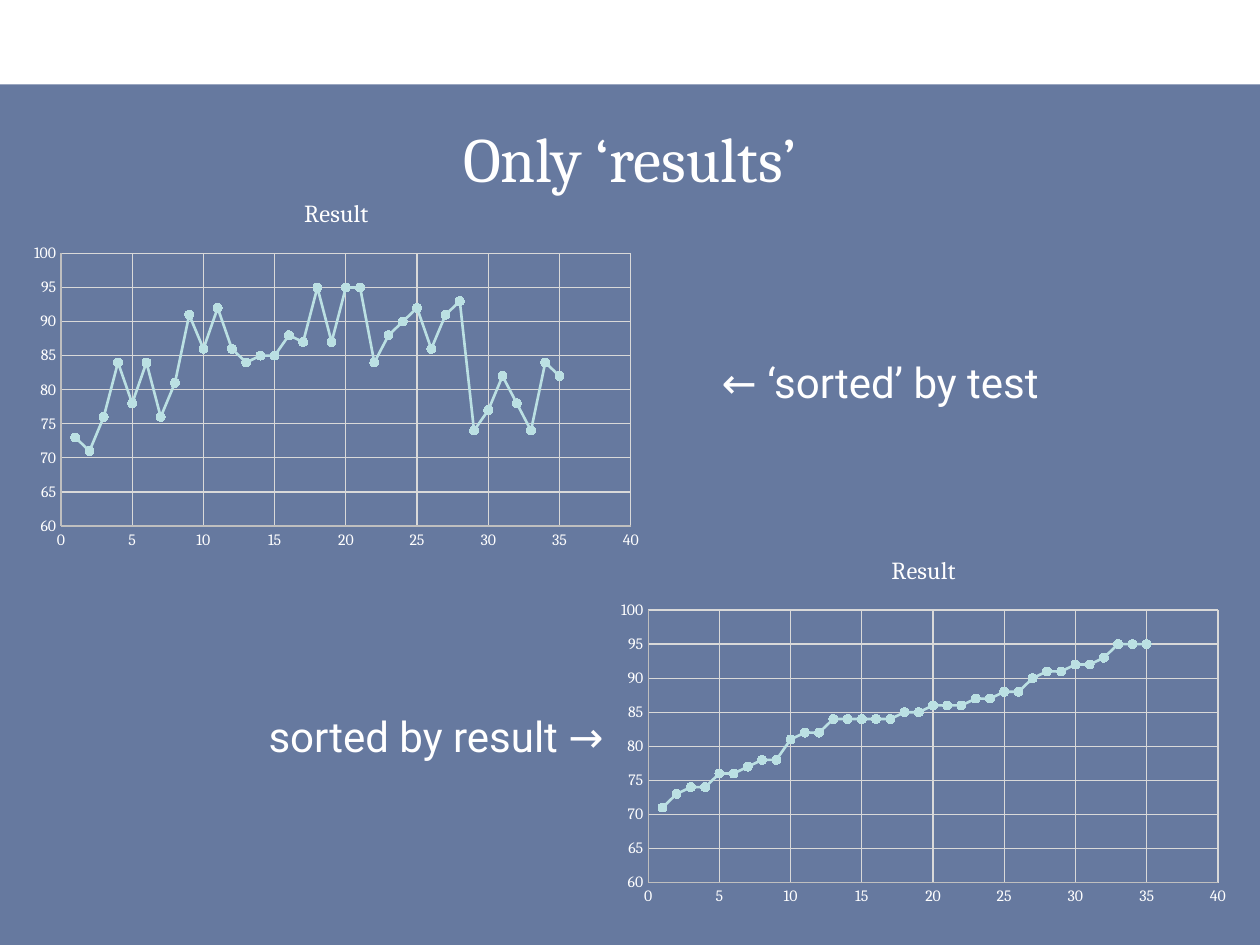
from lxml import etree
from pptx import Presentation
from pptx.chart.data import XyChartData
from pptx.dml.color import RGBColor
from pptx.enum.chart import XL_CHART_TYPE, XL_MARKER_STYLE, XL_TICK_MARK
from pptx.enum.shapes import MSO_SHAPE
from pptx.enum.text import MSO_ANCHOR, PP_ALIGN
from pptx.oxml.ns import qn
from pptx.util import Inches, Pt

SCATTER = XL_CHART_TYPE.XY_SCATTER_LINES
CIRCLE = XL_MARKER_STYLE.CIRCLE
NO_TICK = XL_TICK_MARK.NONE
RECT = MSO_SHAPE.RECTANGLE
MIDDLE = MSO_ANCHOR.MIDDLE
LEFT, CENTER, RIGHT = PP_ALIGN.LEFT, PP_ALIGN.CENTER, PP_ALIGN.RIGHT

WHITE, NAVY, SERIES = "FFFFFF", "002060", "BBE0E3"
AXIS, GRID = "BFBFBF", "D9D9D9"
SERIF, SANS = "Cambria", "Roboto"

RESULTS = [73, 71, 76, 84, 78, 84, 76, 81, 91, 86, 92, 86, 84, 85, 85, 88, 87, 95,
           87, 95, 95, 84, 88, 90, 92, 86, 91, 93, 74, 77, 82, 78, 74, 84, 82]


def rgb(color):
    return RGBColor.from_string(color)


def style_font(font, name, size, color=WHITE):
    font.name = name
    font.size = Pt(size)
    font.bold = False
    font.color.rgb = rgb(color)


def style_line(line, color, width):
    line.color.rgb = rgb(color)
    line.width = Pt(width)


def fill_solid(fill, color):
    fill.solid()
    fill.fore_color.rgb = rgb(color)


def add_panel(slide, box, color, opacity):
    s = slide.shapes.add_shape(RECT, *map(Inches, box))
    s.shadow.inherit = False
    s.line.fill.background()
    fill_solid(s.fill, color)
    clr = s.fill._xPr.find(".//" + qn("a:srgbClr"))
    etree.SubElement(clr, qn("a:alpha"), val=str(opacity * 1000))


def add_text(slide, box, text, font, size, align):
    tf = slide.shapes.add_textbox(*map(Inches, box)).text_frame
    tf.word_wrap = True
    tf.vertical_anchor = MIDDLE
    tf.text = text
    p = tf.paragraphs[0]
    p.alignment = align
    style_font(p.runs[0].font, font, size)


def style_axis(axis, low, high):
    axis.minimum_scale, axis.maximum_scale = low, high
    axis.major_unit = 5
    axis.major_tick_mark = axis.minor_tick_mark = NO_TICK
    axis.has_major_gridlines = True
    style_line(axis.major_gridlines.format.line, GRID, 0.75)
    style_line(axis.format.line, AXIS, 0.75)
    style_font(axis.tick_labels.font, SERIF, 9)


def add_result_chart(slide, box, values):
    data = XyChartData()
    points = data.add_series("Result")
    for x, y in enumerate(values, 1):
        points.add_data_point(x, y)
    chart = slide.shapes.add_chart(SCATTER, *map(Inches, box), data).chart
    style_font(chart.font, SERIF, 10)
    chart.has_legend = False
    chart.has_title = True
    title = chart.chart_title
    title.include_in_layout = False
    title.text_frame.text = "Result"
    style_font(title.text_frame.paragraphs[0].runs[0].font, SERIF, 14)
    style_axis(chart.category_axis, 0, 40)
    style_axis(chart.value_axis, 60, 100)
    chart.plots[0].vary_by_categories = False
    series = chart.plots[0].series[0]
    series.smooth = False
    style_line(series.format.line, SERIES, 1.5)
    series.marker.style = CIRCLE
    series.marker.size = 5
    fill_solid(series.marker.format.fill, SERIES)
    style_line(series.marker.format.line, SERIES, 0.75)


def main():
    prs = Presentation()
    prs.slide_width, prs.slide_height = Inches(10), Inches(7.5)
    slide = prs.slides.add_slide(prs.slide_layouts[6])
    add_panel(slide, (0, 0.67, 10, 6.83), NAVY, 60)
    add_text(slide, (0.25, 0.83, 9.5, 0.83), "Only ‘results’", SERIF, 36, CENTER)
    add_text(slide, (5.63, 2.78, 4, 0.5), "← ‘sorted’ by test", SANS, 24, LEFT)
    add_text(slide, (0.89, 5.59, 4, 0.5), "sorted by result →", SANS, 24, RIGHT)
    add_result_chart(slide, (0.17, 1.42, 5, 3), RESULTS)
    add_result_chart(slide, (4.83, 4.25, 5, 3), sorted(RESULTS))
    prs.save("out.pptx")


if __name__ == "__main__":
    main()
